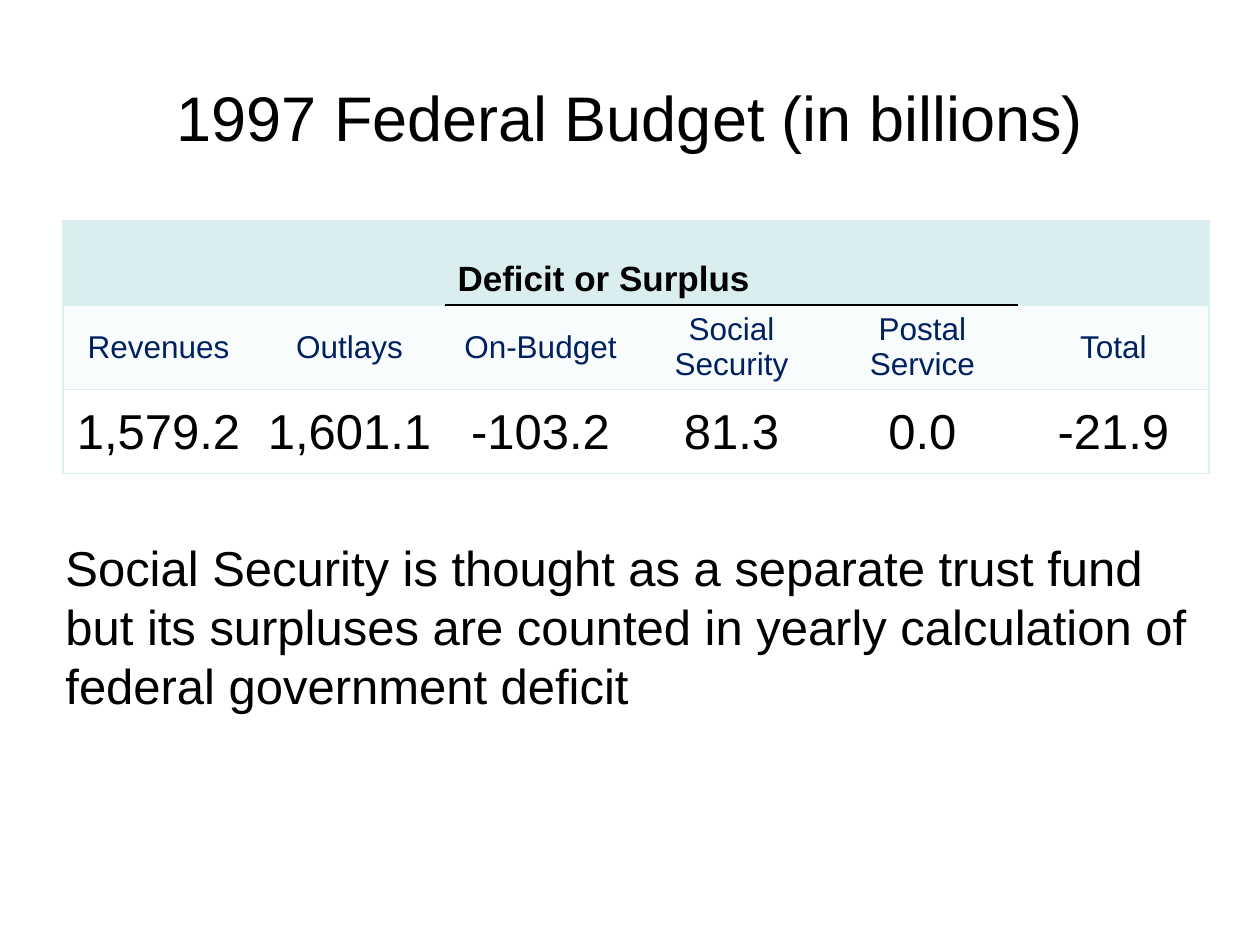
from lxml.etree import SubElement
from pptx import Presentation
from pptx.dml.color import RGBColor
from pptx.enum.text import MSO_ANCHOR as Anchor, MSO_AUTO_SIZE as Fit, PP_ALIGN as Align
from pptx.oxml import parse_xml
from pptx.oxml.ns import nsdecls, qn
from pptx.util import Cm, Pt

BLACK = RGBColor(0x00, 0x00, 0x00)
NAVY = RGBColor(0x00, 0x20, 0x60)
TEAL = RGBColor(0xDA, 0xED, 0xEF)
PALE = RGBColor(0xF8, 0xFC, 0xFC)
WHITE = RGBColor(0xFF, 0xFF, 0xFF)


def write(frame, text, align, size, color, bold=False):
    frame.text = text
    para = frame.paragraphs[0]
    para.alignment = align
    look = {"name": "Arial", "size": Pt(size), "bold": bold}
    for key, value in look.items():
        setattr(para.font, key, value)
    para.font.color.rgb = color


def edge(cell, side, color):
    """Draw one cell border, or hide it if color is None."""
    line = parse_xml(f'<a:ln{side} w="12700" {nsdecls("a")}/>')
    if color is None:
        SubElement(line, qn("a:noFill"))
    else:
        fill = SubElement(line, qn("a:solidFill"))
        SubElement(fill, qn("a:srgbClr"), val=str(color))
    props = cell._tc.get_or_add_tcPr()
    props.insert("LRTB".index(side), line)


deck = Presentation()
deck.slide_width, deck.slide_height = Cm(25.4), Cm(19.05)
slide = deck.slides.add_slide(deck.slide_layouts[5])

title = slide.shapes.title
place = {"left": Cm(1.27), "top": Cm(0.76), "width": Cm(22.86), "height": Cm(3.18)}
for key, value in place.items():
    setattr(title, key, value)
title.text_frame.vertical_anchor = Anchor.MIDDLE
write(title.text_frame, "1997 Federal Budget (in billions)", Align.CENTER, 36, BLACK)

# Each row: fill, text size, text colour, cell texts
rows = [
    (TEAL, 20, BLACK, ["", "", "Deficit or Surplus", "", "", ""]),
    (PALE, 18, NAVY, ["Revenues", "Outlays", "On-Budget", "Social Security",
                      "Postal Service", "Total"]),
    (WHITE, 28, BLACK, ["1,579.2", "1,601.1", "-103.2", "81.3", "0.0", "-21.9"]),
]
group = range(2, 5)
last = 5

grid = slide.shapes.add_table(3, 6, Cm(1.27), Cm(4.45), Cm(23.1), Cm(5.1)).table
grid.first_row = grid.horz_banding = False
for col in grid.columns:
    col.width = Cm(3.85)
for row in grid.rows:
    row.height = Cm(1.7)
grid.cell(0, group[0]).merge(grid.cell(0, group[-1]))

for r, (fill, size, color, texts) in enumerate(rows):
    for c, text in enumerate(texts):
        cell = grid.cell(r, c)
        cell.fill.solid()
        cell.fill.fore_color.rgb = fill
        cell.vertical_anchor = Anchor.MIDDLE if r else Anchor.BOTTOM
        if text:
            write(cell.text_frame, text, Align.CENTER if r else Align.LEFT,
                  size, color, bold=r == 0)
        if r == 2:
            for side in ("left", "right", "top"):
                setattr(cell, f"margin_{side}", Cm(0.03))
            cell.margin_bottom = 0
        edge(cell, "L", TEAL if c == 0 else None)
        edge(cell, "R", TEAL if c == last else None)
        edge(cell, "T", BLACK if r == 1 and c in group else TEAL)
        edge(cell, "B", BLACK if r == 0 and c in group else TEAL)

note = slide.shapes.add_textbox(Cm(1.07), Cm(10.72), Cm(23.29), Cm(3.84)).text_frame
note.word_wrap = True
note.auto_size = Fit.SHAPE_TO_FIT_TEXT
write(note, "Social Security is thought as a separate trust fund but its surpluses "
      "are counted in yearly calculation of federal government deficit",
      Align.LEFT, 28, BLACK)

deck.save("out.pptx")
